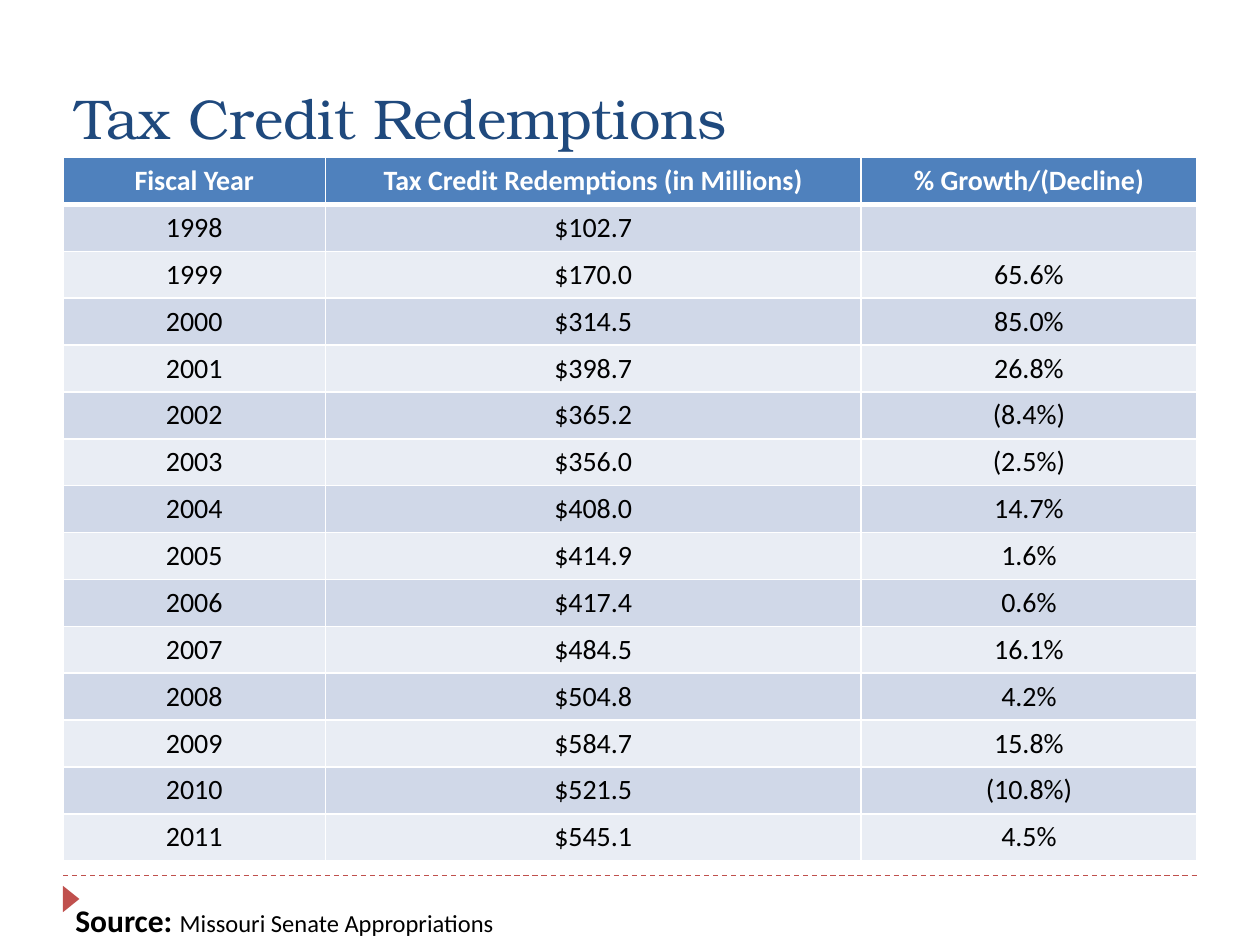
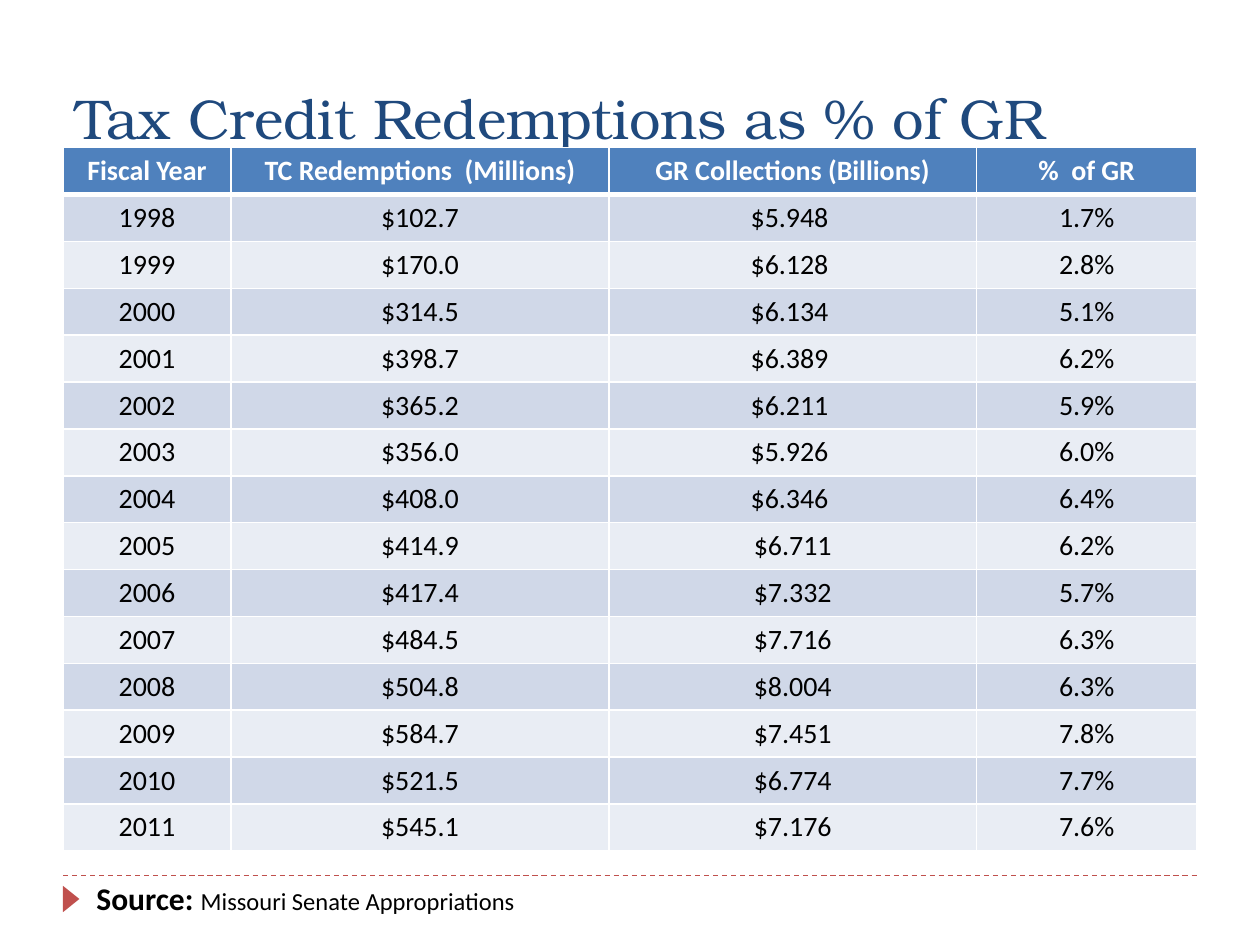
from lxml import etree
from pptx import Presentation
from pptx.dml.color import RGBColor
from pptx.enum.dml import MSO_LINE
from pptx.enum.shapes import MSO_CONNECTOR, MSO_SHAPE
from pptx.enum.text import MSO_ANCHOR, MSO_AUTO_SIZE, PP_ALIGN
from pptx.oxml.ns import qn
from pptx.util import Pt

STRAIGHT = MSO_CONNECTOR.STRAIGHT
TRIANGLE = MSO_SHAPE.ISOSCELES_TRIANGLE
DASH = MSO_LINE.DASH
BOTTOM = MSO_ANCHOR.BOTTOM
NO_FIT = MSO_AUTO_SIZE.NONE
LEFT, CENTER = PP_ALIGN.LEFT, PP_ALIGN.CENTER

NAVY = RGBColor(0x1F, 0x49, 0x7D)
HEADER_BLUE = RGBColor(0x4F, 0x81, 0xBD)
BANDS = (RGBColor(0xD0, 0xD8, 0xE8), RGBColor(0xE9, 0xED, 0xF4))
RED = RGBColor(0xC0, 0x50, 0x4D)
WHITE = RGBColor(0xFF, 0xFF, 0xFF)
BLACK = RGBColor(0, 0, 0)

TITLE_FONT = {"name": "TeX Gyre Bonum", "size": Pt(32), "bold": False}
HEADER_FONT = {"name": "Calibri", "size": Pt(16), "bold": True}
BODY_FONT = {**HEADER_FONT, "bold": False}
SOURCE_LABEL_FONT = {"name": "Calibri", "size": Pt(18), "bold": True}
SOURCE_NAME_FONT = {"name": "Calibri", "size": Pt(14), "bold": False}

MARGIN, CONTENT_WIDTH = 36, 648
TITLE_BOX = (MARGIN, 12, CONTENT_WIDTH, 78)
RULE_TOPS = (90, 500.4)
MARKER_BOX = (33.1, 509, 15.1, 9.4)
ROW_HEIGHT = 26.7

YEARS = [str(year) for year in range(1998, 2012)]
REDEMPTIONS = ["$102.7", "$170.0", "$314.5", "$398.7", "$365.2", "$356.0", "$408.0",
               "$414.9", "$417.4", "$484.5", "$504.8", "$584.7", "$521.5", "$545.1"]
GROWTH = ["", "65.6%", "85.0%", "26.8%", "(8.4%)", "(2.5%)", "14.7%",
          "1.6%", "0.6%", "16.1%", "4.2%", "15.8%", "(10.8%)", "4.5%"]
GR_COLLECTIONS = ["$5.948 ", "$6.128 ", "$6.134 ", "$6.389 ", "$6.211 ", "$5.926 ", "$6.346 ",
                  "$6.711", "$7.332", "$7.716", "$8.004", "$7.451", "$6.774", "$7.176"]
GR_SHARE = ["1.7%", "2.8%", "5.1%", "6.2%", "5.9%", "6.0%", "6.4%",
            "6.2%", "5.7%", "6.3%", "6.3%", "7.8%", "7.7%", "7.6%"]

# Each column: heading, width, values
SLIDES = [
    {
        "title": "Tax Credit Redemptions",
        "table_top": 90,
        "columns": [
            ("Fiscal Year", 150, YEARS),
            ("Tax Credit Redemptions (in Millions)", 306, REDEMPTIONS),
            ("% Growth/(Decline)", 192, GROWTH),
        ],
        "source_box": (36, 511.2, 324, 29),
    },
    {
        "title": "Tax Credit Redemptions as % of GR",
        "table_top": 84.4,
        "columns": [
            ("Fiscal Year", 96, YEARS),
            ("TC Redemptions  (Millions)", 216, REDEMPTIONS),
            ("GR Collections (Billions)", 210, GR_COLLECTIONS),
            ("%  of GR", 126, GR_SHARE),
        ],
        "source_box": (48, 498.5, 342, 29),
    },
]


def points(box):
    return [Pt(length) for length in box]


def add_run(paragraph, text, font, color):
    run = paragraph.add_run()
    run.text = text
    for attribute, value in font.items():
        setattr(run.font, attribute, value)
    run.font.color.rgb = color


def place_title(slide, text, box):
    title = slide.shapes.title
    title.left, title.top, title.width, title.height = points(box)
    frame = title.text_frame
    frame.auto_size = NO_FIT
    frame.vertical_anchor = BOTTOM
    frame.paragraphs[0].alignment = LEFT
    add_run(frame.paragraphs[0], text, TITLE_FONT, NAVY)


def add_frame(slide):
    """Draw the dashed rules and the red footer marker."""
    for top in RULE_TOPS:
        rule = slide.shapes.add_connector(
            STRAIGHT, *points((MARGIN, top, MARGIN + CONTENT_WIDTH, top)))
        rule.line.color.rgb = RED
        rule.line.width = Pt(0.75)
        rule.line.dash_style = DASH
        etree.SubElement(rule._element.spPr, qn("a:effectLst"))
    marker = slide.shapes.add_shape(TRIANGLE, *points(MARKER_BOX))
    marker.rotation = 90
    marker.shadow.inherit = False
    marker.fill.solid()
    marker.fill.fore_color.rgb = RED
    marker.line.fill.background()


def set_borders(cell, top, bottom):
    """Give a cell white borders; top and bottom are widths in points."""
    properties = cell._tc.get_or_add_tcPr()
    for side, width in (("L", 1), ("R", 1), ("T", top), ("B", bottom)):
        border = etree.SubElement(properties, qn(f"a:ln{side}"), w=str(Pt(width)))
        fill = etree.SubElement(border, qn("a:solidFill"))
        etree.SubElement(fill, qn("a:srgbClr"), val=str(WHITE))


def fill_cell(cell, text, row):
    is_header = row == 0
    set_borders(cell, top=3 if row == 1 else 1, bottom=3 if is_header else 1)
    cell.fill.solid()
    cell.fill.fore_color.rgb = HEADER_BLUE if is_header else BANDS[(row - 1) % 2]
    paragraph = cell.text_frame.paragraphs[0]
    paragraph.alignment = CENTER
    if text:
        add_run(paragraph, text, HEADER_FONT if is_header else BODY_FONT,
                WHITE if is_header else BLACK)
    else:  # keeps the row from growing to the default text size
        etree.SubElement(paragraph._p, qn("a:endParaRPr"), sz="1600")


def add_yearly_table(slide, columns, left, top):
    row_count = len(YEARS) + 1
    box = (left, top, sum(width for _, width, _ in columns), row_count * ROW_HEIGHT)
    table = slide.shapes.add_table(row_count, len(columns), *points(box)).table
    for row in table.rows:
        row.height = Pt(ROW_HEIGHT)
    for column, (heading, width, values) in enumerate(columns):
        table.columns[column].width = Pt(width)
        for row, text in enumerate([heading, *values]):
            fill_cell(table.cell(row, column), text, row)


def add_source(slide, box):
    frame = slide.shapes.add_textbox(*points(box)).text_frame
    frame.word_wrap = True
    paragraph = frame.paragraphs[0]
    add_run(paragraph, "Source: ", SOURCE_LABEL_FONT, BLACK)
    add_run(paragraph, "Missouri Senate Appropriations", SOURCE_NAME_FONT, BLACK)


def add_table_slide(presentation, title, table_top, columns, source_box):
    slide = presentation.slides.add_slide(presentation.slide_layouts[5])
    place_title(slide, title, TITLE_BOX)
    add_frame(slide)
    add_yearly_table(slide, columns, MARGIN, table_top)
    add_source(slide, source_box)


def main():
    presentation = Presentation()
    presentation.slide_width, presentation.slide_height = Pt(720), Pt(540)
    for content in SLIDES:
        add_table_slide(presentation, **content)
    presentation.save("out.pptx")


if __name__ == "__main__":
    main()
